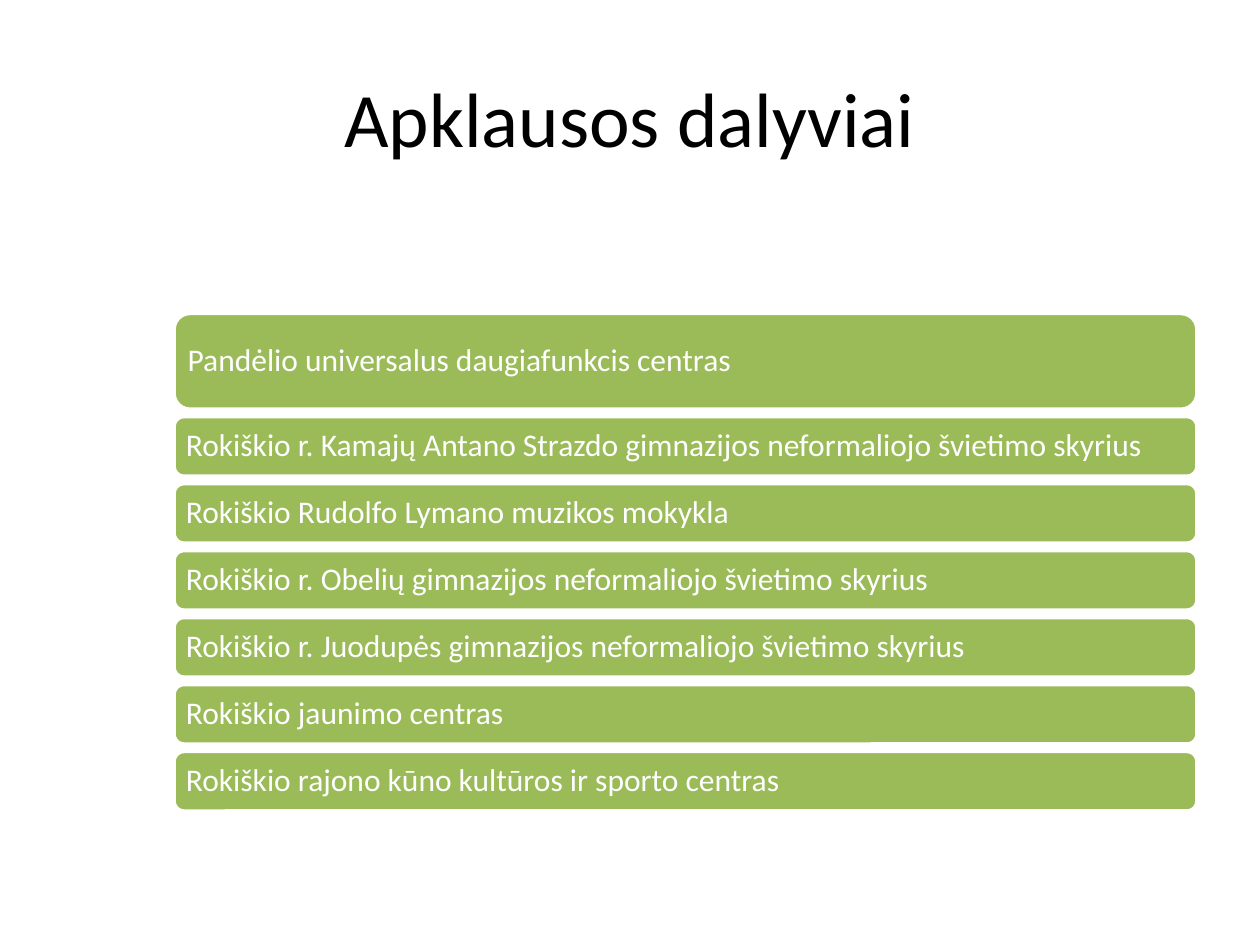
from pptx import Presentation
from pptx.dml.color import RGBColor
from pptx.enum.shapes import MSO_SHAPE
from pptx.enum.text import MSO_ANCHOR, PP_ALIGN
from pptx.util import Cm, Pt

ROUNDED = MSO_SHAPE.ROUNDED_RECTANGLE
MIDDLE = MSO_ANCHOR.MIDDLE
LEFT, CENTER = PP_ALIGN.LEFT, PP_ALIGN.CENTER

GREEN, WHITE, BLACK = "9BBB59", "FFFFFF", "000000"
BAR_LEFT, BAR_WIDTH, BAR_GAP = 3.51, 20.62, 0.15
FIRST_HEIGHT, BAR_HEIGHT = 1.93, 1.2

PARTICIPANTS = [
    "Pandėlio universalus daugiafunkcis centras",
    "Rokiškio r. Kamajų Antano Strazdo gimnazijos neformaliojo švietimo skyrius",
    "Rokiškio Rudolfo Lymano muzikos mokykla",
    "Rokiškio r. Obelių gimnazijos neformaliojo švietimo skyrius",
    "Rokiškio r. Juodupės gimnazijos neformaliojo švietimo skyrius",
    "Rokiškio jaunimo centras",
    "Rokiškio rajono kūno kultūros ir sporto centras",
]


def color(hex_value):
    return RGBColor.from_string(hex_value)


def write_text(shape, text, size, hex_value, paragraph_format, frame_format):
    frame = shape.text_frame
    frame.text = text
    for name, value in frame_format.items():
        setattr(frame, name, value)
    paragraph = frame.paragraphs[0]
    for name, value in paragraph_format.items():
        setattr(paragraph, name, value)
    font = paragraph.runs[0].font
    font.name, font.size = "Calibri", Pt(size)
    font.color.rgb = color(hex_value)


presentation = Presentation()
presentation.slide_width, presentation.slide_height = Cm(25.4), Cm(19.05)
slide = presentation.slides.add_slide(presentation.slide_layouts[5])

# Title
title = slide.shapes.title
title.left, title.top, title.width, title.height = Cm(1.27), Cm(0.76), Cm(22.86), Cm(3.18)
write_text(title, "Apklausos dalyviai", 44, BLACK,
           {"alignment": CENTER}, {"vertical_anchor": MIDDLE})

# Stacked bars, the first one taller
bar_frame = {"vertical_anchor": MIDDLE, "word_wrap": True}
for side in ("left", "top", "right", "bottom"):
    bar_frame[f"margin_{side}"] = Cm(0.18)

top = 6.32
for index, participant in enumerate(PARTICIPANTS):
    height = BAR_HEIGHT if index else FIRST_HEIGHT
    bar = slide.shapes.add_shape(ROUNDED, Cm(BAR_LEFT), Cm(top), Cm(BAR_WIDTH), Cm(height))
    bar.shadow.inherit = False
    bar.fill.solid()
    bar.fill.fore_color.rgb = color(GREEN)
    bar.line.color.rgb = color(WHITE)
    bar.line.width = Pt(2)
    write_text(bar, participant, 18, WHITE,
               {"alignment": LEFT, "line_spacing": 0.9}, bar_frame)
    top += height + BAR_GAP

presentation.save("out.pptx")
